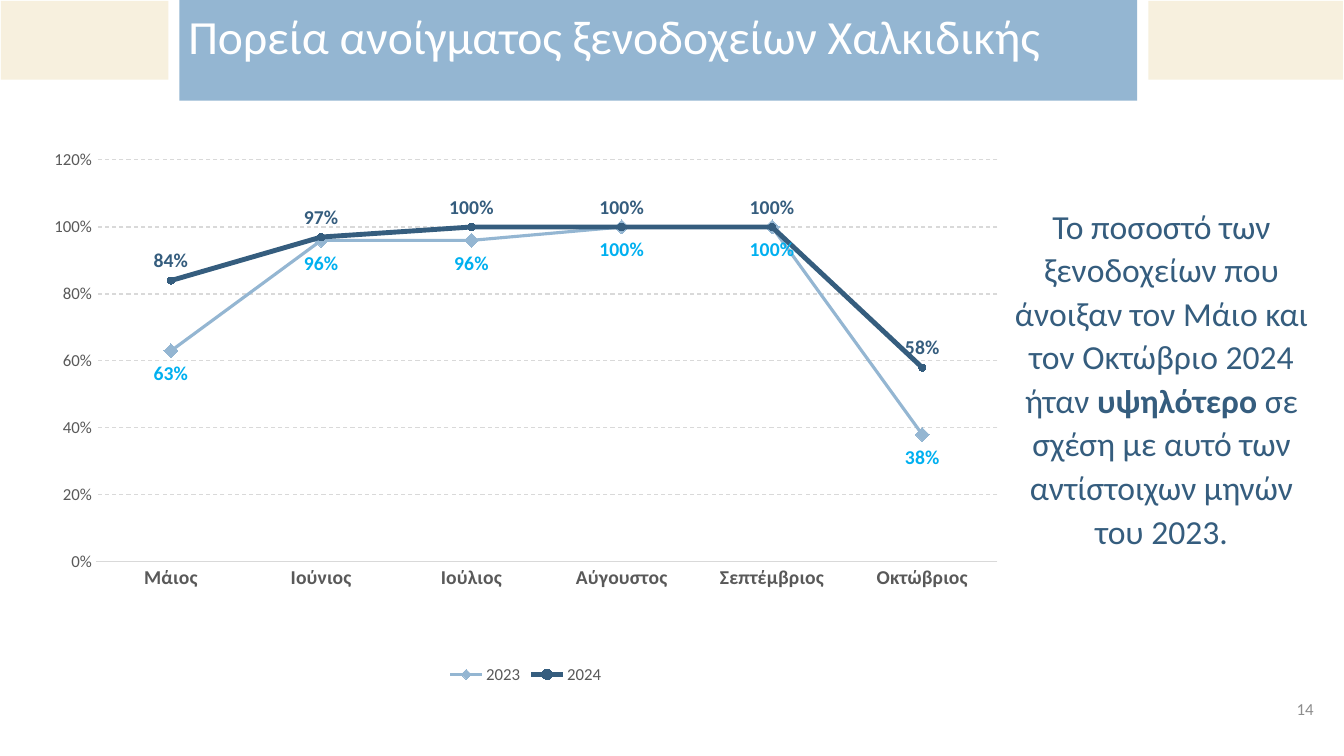
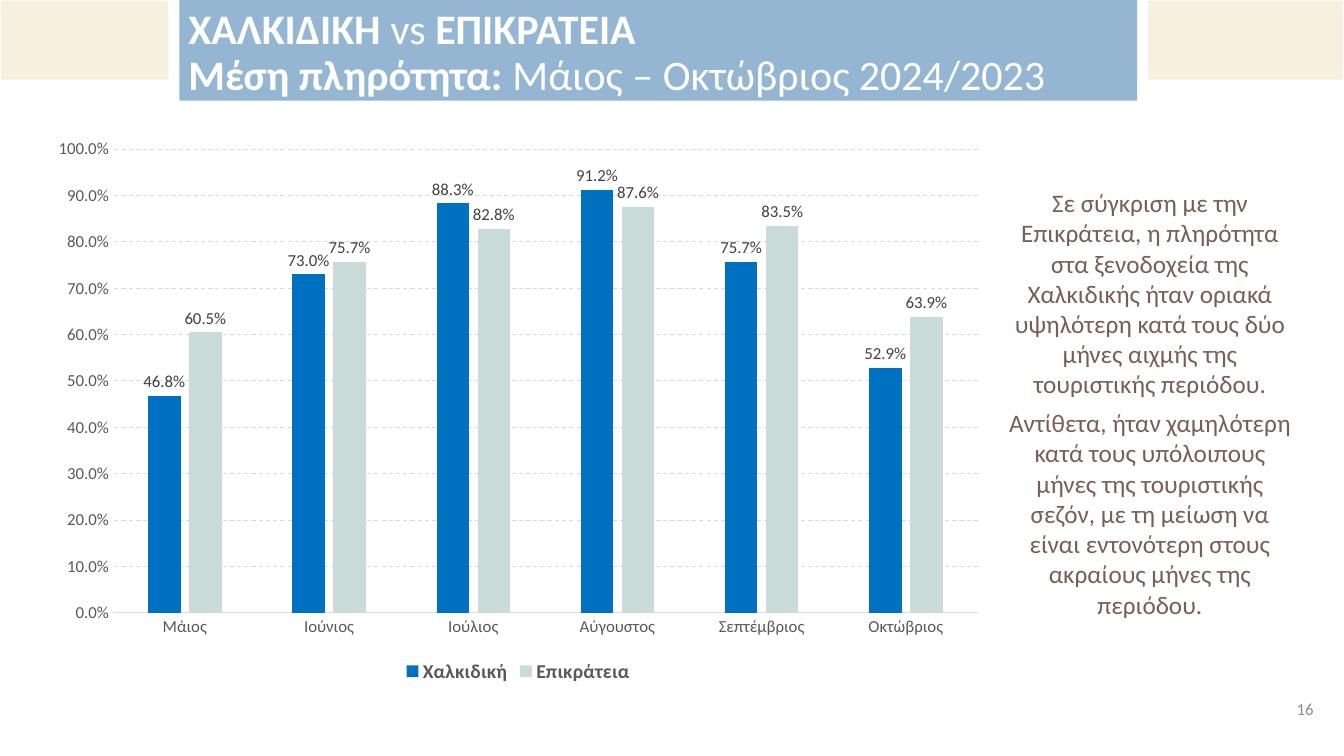
import pptx
import pptx.chart.data
import pptx.dml.color
import pptx.enum.chart
import pptx.enum.dml
import pptx.enum.shapes
import pptx.enum.text
import pptx.oxml
import pptx.oxml.ns
import pptx.util

Inches = pptx.util.Inches
Pt = pptx.util.Pt
RGBColor = pptx.dml.color.RGBColor
ChartType = pptx.enum.chart.XL_CHART_TYPE
LabelPosition = pptx.enum.chart.XL_LABEL_POSITION
MarkerStyle = pptx.enum.chart.XL_MARKER_STYLE
Align = pptx.enum.text.PP_ALIGN
Anchor = pptx.enum.text.MSO_ANCHOR

FONT = "Calibri"
WHITE = RGBColor(0xFF, 0xFF, 0xFF)
BLACK = RGBColor(0, 0, 0)
CREAM = RGBColor(0xF7, 0xF0, 0xDE)
SKY = RGBColor(0x94, 0xB6, 0xD2)
NAVY = RGBColor(0x35, 0x5D, 0x7E)
CYAN = RGBColor(0x00, 0xB0, 0xF0)
BLUE = RGBColor(0x00, 0x70, 0xC0)
SAGE = RGBColor(0xCA, 0xDC, 0xD8)
BROWN = RGBColor(0x77, 0x5F, 0x55)
AXIS_GREY = RGBColor(0x59, 0x59, 0x59)
LABEL_GREY = RGBColor(0x40, 0x40, 0x40)
NUMBER_GREY = RGBColor(0x8C, 0x8C, 0x8C)
GRID_GREY = RGBColor(0xD9, 0xD9, 0xD9)

BANDS = [
    ((11.39, 0.01, 1.93, 0.78), CREAM),
    ((1.78, 0, 9.5, 1), SKY),
    ((0.01, 0.01, 1.66, 0.78), CREAM),
]
MONTHS = ["Μάιος", "Ιούνιος", "Ιούλιος", "Αύγουστος", "Σεπτέμβριος", "Οκτώβριος"]


def set_font(font, size, color, bold=None):
    font.name = FONT
    font.size = Pt(size)
    font.color.rgb = color
    font.bold = bold


def add_band(slide, box, color):
    band = slide.shapes.add_shape(
        pptx.enum.shapes.MSO_SHAPE.RECTANGLE, *map(Inches, box))
    band.shadow.inherit = False
    band.fill.solid()
    band.fill.fore_color.rgb = color
    band.line.fill.background()


def add_text(slide, box, paragraphs, size, color, align=Align.LEFT,
             anchor=Anchor.TOP, line_spacing=None, gap=0):
    """Write paragraphs, each a list of (text, bold) runs, gap points apart."""
    text_box = slide.shapes.add_textbox(*map(Inches, box))
    frame = text_box.text_frame
    frame.word_wrap = True
    frame.vertical_anchor = anchor
    for index, runs in enumerate(paragraphs):
        paragraph = frame.add_paragraph() if index else frame.paragraphs[0]
        paragraph.alignment = align
        paragraph.line_spacing = line_spacing
        if index and gap:
            paragraph.space_before = Pt(gap)
        set_font(paragraph.font, size, color)
        for text, bold in runs:
            run = paragraph.add_run()
            run.text = text
            if bold:
                run.font.bold = True
    return text_box


def add_comment(slide, box, paragraphs, size, color, **spacing):
    comment = add_text(slide, box, paragraphs, size, color, Align.CENTER, **spacing)
    comment.text_frame.auto_size = pptx.enum.text.MSO_AUTO_SIZE.SHAPE_TO_FIT_TEXT


def add_base_slide(deck, title, title_size, title_height, number):
    slide = deck.slides.add_slide(deck.slide_layouts[6])
    for box, color in BANDS:
        add_band(slide, box, color)
    add_text(slide, (12.69, 6.83, 0.51, 0.4), [[(number, False)]], 12,
             NUMBER_GREY, Align.CENTER, Anchor.MIDDLE)
    add_text(slide, (1.77, 0, 9.5, title_height), title, title_size, WHITE,
             anchor=Anchor.MIDDLE, line_spacing=0.9)
    return slide


def style_axes(chart, number_format, maximum, step):
    no_tick = pptx.enum.chart.XL_TICK_MARK.NONE
    months, shares = chart.category_axis, chart.value_axis
    for axis in (months, shares):
        axis.major_tick_mark = axis.minor_tick_mark = no_tick
        set_font(axis.tick_labels.font, 12, AXIS_GREY, False)
    shares.minimum_scale = 0
    shares.maximum_scale = maximum
    shares.major_unit = step
    shares.tick_labels.number_format = number_format
    shares.tick_labels.number_format_is_linked = False
    shares.format.line.fill.background()
    shares.has_major_gridlines = True
    grid = shares.major_gridlines.format.line
    for line in (months.format.line, grid):
        line.color.rgb = GRID_GREY
        line.width = Pt(0.75)
    grid.dash_style = pptx.enum.dml.MSO_LINE.DASH


def add_month_chart(slide, kind, box, series, number_format, maximum, step):
    """Add a chart of monthly shares; series maps each name to its values."""
    data = pptx.chart.data.CategoryChartData(number_format=number_format)
    data.categories = MONTHS
    for name, values in series.items():
        data.add_series(name, values)
    chart = slide.shapes.add_chart(kind, *map(Inches, box), data).chart
    chart.has_title = False
    set_font(chart.font, 10, BLACK)
    chart.plots[0].vary_by_categories = False
    style_axes(chart, number_format, maximum, step)
    chart.has_legend = True
    chart.legend.position = pptx.enum.chart.XL_LEGEND_POSITION.BOTTOM
    chart.legend.include_in_layout = False
    set_font(chart.legend.font, 12, AXIS_GREY, False)
    return chart


def label_series(series, number_format, position, size, color, bold):
    labels = series.data_labels
    labels.show_value = True
    labels.number_format = number_format
    labels.number_format_is_linked = False
    labels.position = position
    set_font(labels.font, size, color, bold)


def style_line(series, color, width, marker_style, marker_size):
    series.smooth = False
    series.format.line.color.rgb = color
    series.format.line.width = Pt(width)
    marker = series.marker
    marker.style = marker_style
    marker.size = marker_size
    marker.format.fill.solid()
    marker.format.fill.fore_color.rgb = color
    marker.format.line.fill.background()


def place_plot(chart, x, y, w, h):
    """Fix the inner plot area, in fractions of the chart."""
    plot_area = chart.plots[0]._element.getparent()
    for old in plot_area.findall(pptx.oxml.ns.qn("c:layout")):
        plot_area.remove(old)
    modes = '<c:xMode val="edge"/><c:yMode val="edge"/>'
    sizes = "".join(f'<c:{key} val="{value}"/>'
                    for key, value in zip("xywh", (x, y, w, h)))
    plot_area.insert(0, pptx.oxml.parse_xml(
        f'<c:layout {pptx.oxml.ns.nsdecls("c")}><c:manualLayout>'
        f'<c:layoutTarget val="inner"/>{modes}{sizes}'
        '</c:manualLayout></c:layout>'))


def build_openings(deck):
    slide = add_base_slide(
        deck, [[("Πορεία ανοίγματος ξενοδοχείων Χαλκιδικής", False)]], 34, 0.78, "14")
    openings = {
        "2023": (0.63, 0.96, 0.96, 1, 1, 0.38),
        "2024": (0.84, 0.97, 1, 1, 1, 0.58),
    }
    chart = add_month_chart(slide, ChartType.LINE_MARKERS, (0.29, 1.47, 9.85, 5.36),
                            openings, "0%", 1.2, 0.2)
    place_plot(chart, 0.067, 0.022, 0.908, 0.744)
    set_font(chart.category_axis.tick_labels.font, 14, AXIS_GREY, True)
    year_2023, year_2024 = chart.plots[0].series
    style_line(year_2023, SKY, 2.25, MarkerStyle.DIAMOND, 10)
    style_line(year_2024, NAVY, 3.5, MarkerStyle.CIRCLE, 5)
    label_series(year_2023, "0%", LabelPosition.BELOW, 14, CYAN, True)
    label_series(year_2024, "0%", LabelPosition.ABOVE, 14, NAVY, True)
    add_comment(slide, (9.84, 1.96, 3.36, 3.57), [[
        ("Το ποσοστό των ξενοδοχείων που άνοιξαν τον Μάιο και τον "
         "Οκτώβριο 2024 ήταν ", False),
        ("υψηλότερο", True),
        (" σε σχέση με αυτό των αντίστοιχων μηνών του 2023.", False),
    ]], 24, NAVY, line_spacing=1.08)


def build_occupancy(deck):
    title = [
        [("ΧΑΛΚΙΔΙΚΗ ", True), ("vs ", False), ("ΕΠΙΚΡΑΤΕΙΑ", True)],
        [("Μέση πληρότητα: ", True), ("Μάιος – Οκτώβριος 2024/2023", False)],
    ]
    slide = add_base_slide(deck, title, 30, 1.07, "16")
    occupancy = {
        "Χαλκιδική": (0.468, 0.73, 0.883, 0.912, 0.757, 0.529),
        "Επικράτεια": (0.605, 0.757, 0.828, 0.876, 0.835, 0.639),
    }
    chart = add_month_chart(slide, ChartType.COLUMN_CLUSTERED, (0.39, 1.27, 9.5, 5.55),
                            occupancy, "0.0%", 1, 0.1)
    set_font(chart.legend.font, 14, AXIS_GREY, True)
    columns = chart.plots[0]
    columns.gap_width = 219
    columns.overlap = -27
    for region, color in zip(columns.series, (BLUE, SAGE)):
        region.format.fill.solid()
        region.format.fill.fore_color.rgb = color
        label_series(region, "0.0%", LabelPosition.OUTSIDE_END, 12, LABEL_GREY, False)
    add_comment(slide, (9.87, 1.81, 3.07, 4.43), [
        [("Σε σύγκριση με την Επικράτεια, η πληρότητα στα ξενοδοχεία της "
          "Χαλκιδικής ήταν οριακά υψηλότερη κατά τους δύο μήνες αιχμής της "
          "τουριστικής περιόδου.", False)],
        [("Αντίθετα, ήταν χαμηλότερη κατά τους υπόλοιπους μήνες της "
          "τουριστικής σεζόν, με τη μείωση να είναι εντονότερη στους ακραίους "
          "μήνες της περιόδου.", False)],
    ], 18, BROWN, gap=6)


def main():
    deck = pptx.Presentation()
    deck.slide_width = Inches(13.33)
    deck.slide_height = Inches(7.5)
    build_openings(deck)
    build_occupancy(deck)
    deck.save("out.pptx")


if __name__ == "__main__":
    main()
